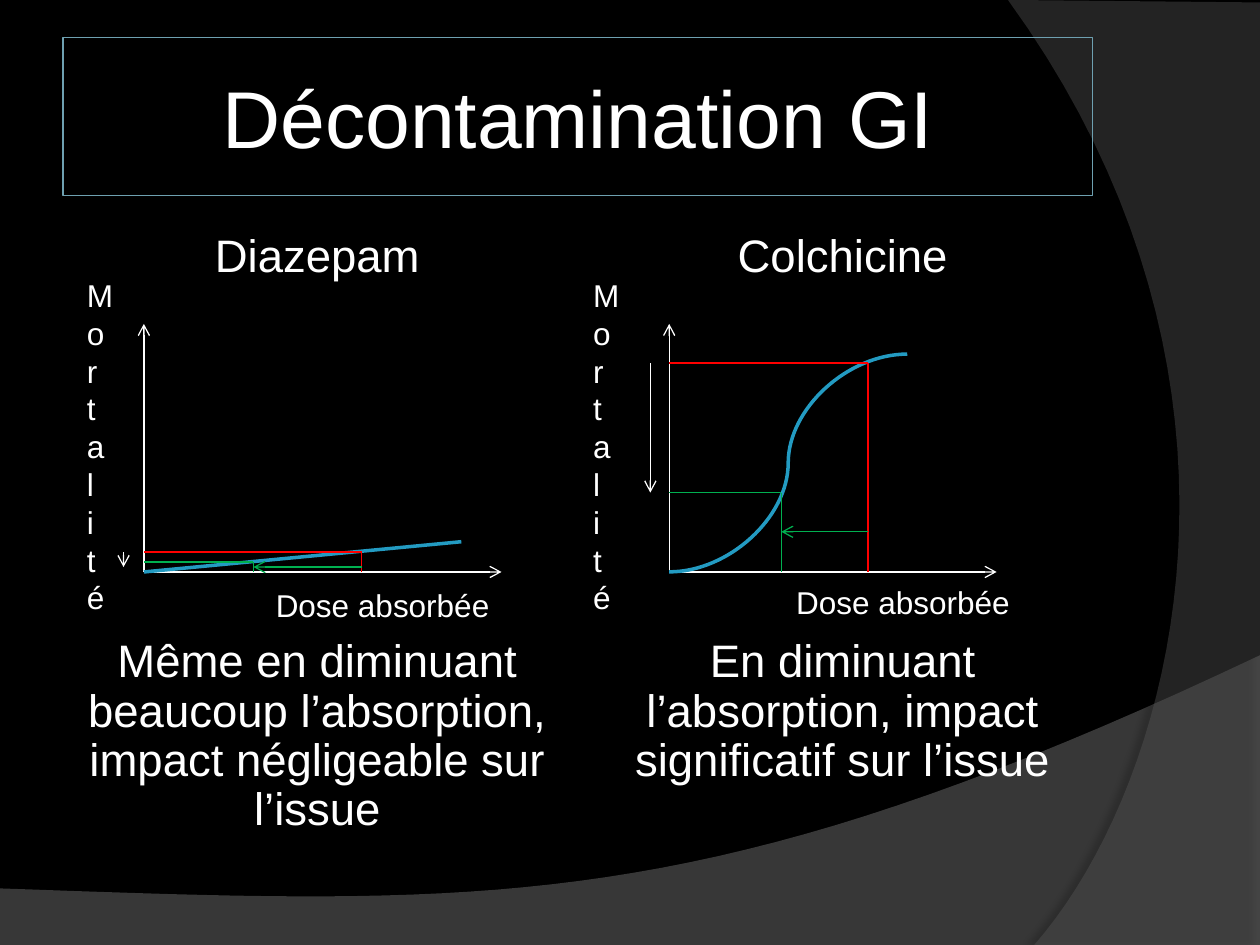
from dataclasses import dataclass

from lxml.etree import SubElement
from pptx import Presentation
from pptx.dml.color import RGBColor as RGB
from pptx.enum.shapes import MSO_CONNECTOR as CONN, MSO_SHAPE as SHAPE
from pptx.enum.text import MSO_ANCHOR as ANCHOR, PP_ALIGN as ALIGN
from pptx.oxml.ns import qn
from pptx.util import Cm, Pt


@dataclass(frozen=True)
class Theme:
    font: str = "Arial"
    back: str = "000000"
    ink: str = "FFFFFF"
    frame: str = "6EA0B0"
    curve: str = "239BC2"
    before: str = "FF0000"
    after: str = "00B050"
    band: str = "7C7C7C"
    swoosh: str = "595959"
    title: int = 46
    body: int = 26
    label: int = 18
    thin: float = 0.75
    thick: float = 2


def bezier(a, b, c, d, steps=40):
    for i in range(1, steps + 1):
        t = i / steps
        u = 1 - t
        yield tuple(u**3 * p + 3 * u * u * t * q + 3 * u * t * t * r + t**3 * s
                    for p, q, r, s in zip(a, b, c, d))


class Deck:
    def __init__(self, prs, theme):
        self.theme = theme
        self.s = prs.slides.add_slide(prs.slide_layouts[6])
        fill = self.s.background.fill
        fill.solid()
        fill.fore_color.rgb = RGB.from_string(theme.back)

    def set_text(self, sp, paragraphs, size, align=ALIGN.LEFT, spacing=1.0, **frame):
        tf = sp.text_frame
        for name, value in {"word_wrap": True, **frame}.items():
            setattr(tf, name, value)
        for i, text in enumerate(paragraphs):
            p = tf.paragraphs[0] if i == 0 else tf.add_paragraph()
            p.alignment, p.line_spacing = align, spacing
            r = p.add_run()
            r.text = text
            r.font.color.rgb = RGB.from_string(self.theme.ink)
            for name, value in {"name": self.theme.font, "size": Pt(size)}.items():
                setattr(r.font, name, value)

    def text(self, box, paragraphs, size, **fmt):
        sp = self.s.shapes.add_textbox(*map(Cm, box))
        self.set_text(sp, paragraphs, size, **fmt)

    def title(self, box, text):
        sp = self.s.shapes.add_shape(SHAPE.RECTANGLE, *map(Cm, box))
        sp.shadow.inherit = False
        sp.fill.background()
        sp.line.color.rgb = RGB.from_string(self.theme.frame)
        sp.line.width = Pt(self.theme.thin)
        margins = {f"margin_{side}": Cm(0.13) for side in ("left", "top", "right", "bottom")}
        self.set_text(sp, [text], self.theme.title, align=ALIGN.CENTER,
                      vertical_anchor=ANCHOR.MIDDLE, **margins)

    def line(self, start, end, color, width=None, arrow=False, kind=CONN.STRAIGHT):
        cx = self.s.shapes.add_connector(kind, *map(Cm, (*start, *end)))
        cx.line.color.rgb = RGB.from_string(color)
        cx.line.width = Pt(width or self.theme.thin)
        if arrow:
            SubElement(cx.get_or_add_ln(), qn("a:tailEnd"), type="arrow")
        SubElement(cx._element.spPr, qn("a:effectLst"))

    def backdrop(self, corners, curve, color, opacity, shadow):
        points = [*corners, *bezier(corners[-1], *curve)]
        (x, y), *rest = [(Cm(px), Cm(py)) for px, py in points]
        fb = self.s.shapes.build_freeform(x, y)
        fb.add_line_segments(rest, close=True)
        sp = fb.convert_to_shape()
        sp.shadow.inherit = False
        sp.line.fill.background()
        sp.fill.solid()
        sp.fill.fore_color.rgb = RGB.from_string(color)
        spPr = sp._element.spPr
        SubElement(spPr.find(".//" + qn("a:srgbClr")), qn("a:alpha"), val=str(opacity * 1000))
        alpha, blur, dist, angle = shadow
        outer = SubElement(spPr.find(qn("a:effectLst")), qn("a:outerShdw"),
                           blurRad=str(Pt(blur)), dist=str(Pt(dist)),
                           dir=str(angle * 60000), rotWithShape="0")
        clr = SubElement(outer, qn("a:srgbClr"), val="000000")
        SubElement(clr, qn("a:alpha"), val=str(alpha * 1000))

    def axes(self, origin, top, right):
        x, y = origin
        for end in ((x, top), (right, y)):
            self.line(origin, end, self.theme.ink, arrow=True)

    def projection(self, origin, point, color):
        x, y = point
        self.line((x, origin[1]), point, color)
        self.line(point, (origin[0], y), color)

    def panel(self, drug, note, left, origin, right, curve, high, low,
              shift_y, drop, mortality_x, dose):
        th = self.theme
        for text, y, h, spacing in ((drug, 4.45, 1.3, 1.0), (note, 12.75, 5, 0.9)):
            self.text((left, y, 10.06, h), [text], th.body, align=ALIGN.CENTER,
                      spacing=spacing)
        self.axes(origin, 6.53, right)
        end, kind = curve
        self.line(origin, end, th.curve, th.thick, kind=kind)
        self.text((*dose, 5, 1.02), ["Dose absorbée"], th.label)
        self.text((mortality_x, 5.44, 0.99, 7.19), ["Mor", "tal", "i", "té"], th.label)
        self.projection(origin, low, th.after)
        self.projection(origin, high, th.before)
        self.line((high[0], shift_y), (low[0], shift_y), th.after, arrow=True)
        drop_x, drop_end = drop
        self.line((drop_x, high[1]), (drop_x, drop_end), th.ink, arrow=True)


def main():
    prs = Presentation()
    prs.slide_width, prs.slide_height = Cm(25.4), Cm(19.05)
    th = Theme()
    deck = Deck(prs, th)

    deck.backdrop([(0, 17.91), (0, 19.05), (25.4, 19.05), (25.4, 13.21)],
                  [(14.2, 18.52), (9.93, 18.26), (0, 17.91)],
                  th.band, 45, (35, 4, 3.5, 270))
    deck.backdrop([(25.4, 0.05), (25.4, 19.05), (20.85, 19.05)],
                  [(23.75, 15.72), (25.86, 7.62), (20.32, 0)],
                  th.swoosh, 40, (45, 4, 4, 180))
    deck.title((1.27, 0.76, 20.75, 3.18), "Décontamination GI")

    deck.panel("Diazepam",
               "Même en diminuant beaucoup l’absorption, impact négligeable sur l’issue",
               left=1.37, origin=(2.9, 11.53), right=10.11,
               curve=((9.3, 10.92), CONN.STRAIGHT),
               high=(7.29, 11.13), low=(5.11, 11.33), shift_y=11.43,
               drop=(2.49, 11.43), mortality_x=1.5, dose=(5.31, 11.68))
    deck.panel("Colchicine",
               "En diminuant l’absorption, impact significatif sur l’issue",
               left=11.96, origin=(13.49, 11.53), right=20.09,
               curve=((18.29, 7.14), CONN.CURVE),
               high=(17.5, 7.32), low=(15.75, 9.93), shift_y=10.72,
               drop=(13.11, 9.93), mortality_x=11.71, dose=(15.8, 11.63))

    prs.save("out.pptx")


if __name__ == "__main__":
    main()
